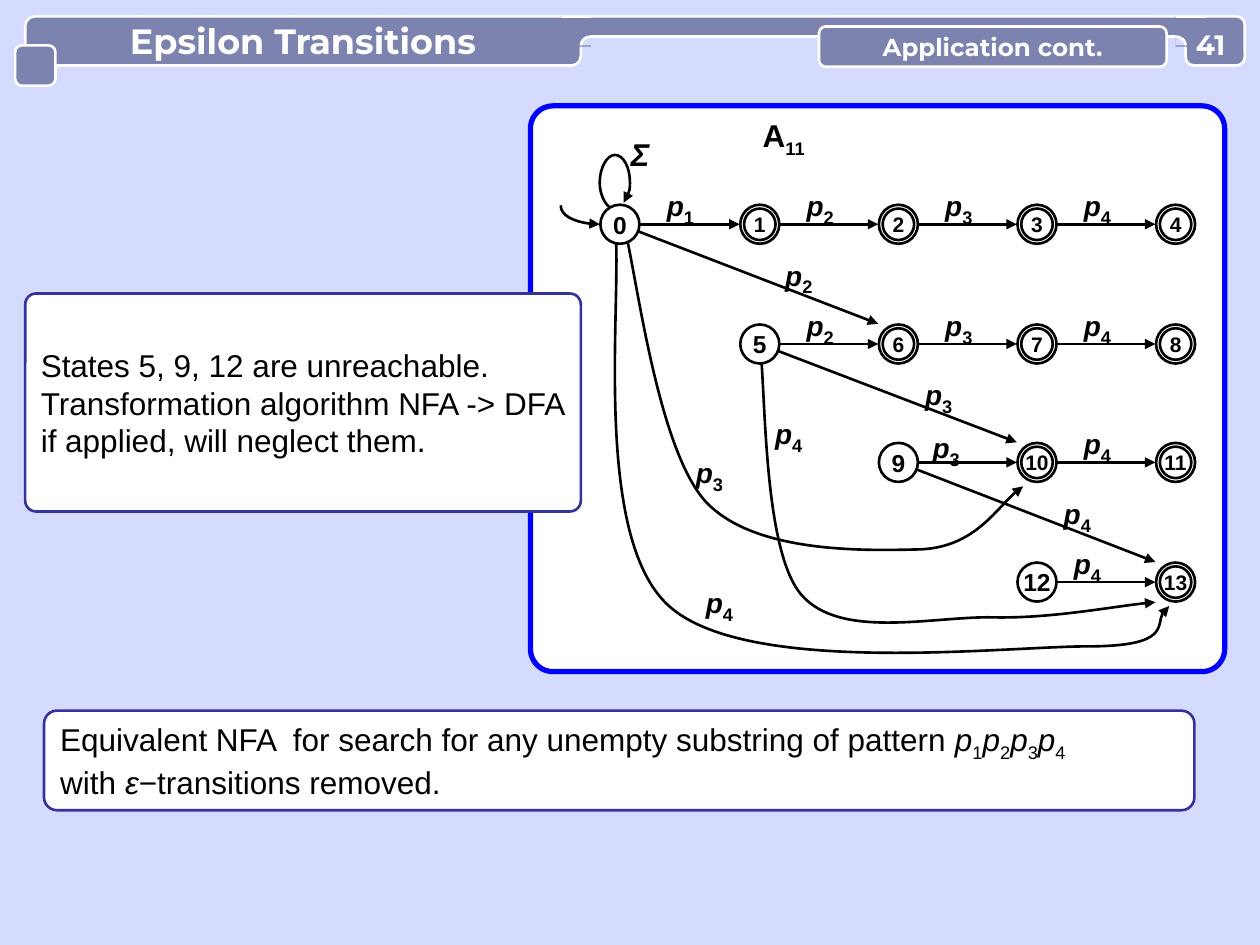
from dataclasses import dataclass

from lxml import etree
from pptx import Presentation
from pptx.dml.color import RGBColor
from pptx.enum.shapes import MSO_CONNECTOR, MSO_SHAPE
from pptx.enum.text import MSO_ANCHOR, PP_ALIGN
from pptx.oxml.ns import qn
from pptx.util import Inches, Pt

LEFT, CENTER = PP_ALIGN.LEFT, PP_ALIGN.CENTER
TOP, MIDDLE = MSO_ANCHOR.TOP, MSO_ANCHOR.MIDDLE
RECT, ROUND, OVAL = MSO_SHAPE.RECTANGLE, MSO_SHAPE.ROUNDED_RECTANGLE, MSO_SHAPE.OVAL


@dataclass(frozen=True)
class Theme:
    page: str = "D5DAFF"
    bar: str = "7D83AF"
    white: str = "FFFFFF"
    ink: str = "000000"
    frame: str = "0000FF"
    note: str = "333399"
    body_font: str = "Arial"
    head_font: str = "Montserrat"
    title: int = 20
    body: int = 18
    symbol: int = 16
    start_state: int = 14
    final_state: int = 12
    line: float = 1.5
    frame_line: float = 3


T = Theme()

# Text: paragraphs of (text, style) runs; style is any of b, i, _ (subscript)
TITLE, SUBTITLE, PAGE_NUMBER = "Epsilon Transitions", "Application cont.", "41"
UNREACHABLE = [
    [("States 5, 9, 12 are unreachable.", "")],
    [("Transformation algorithm NFA -> DFA", "")],
    [("if applied, will neglect them.", "")],
]
PATTERN = [run for n in "1234" for run in (("p", "i"), (n, "_"))]
SUMMARY = [
    [("Equivalent NFA  for search for any unempty substring of pattern ", ""), *PATTERN],
    [("with ", ""), ("ε", "i"), ("−transitions removed.", "")],
]

# Automaton: row r starts in column r with an unmarked state, the rest are final
COLS = (4.92, 6.03, 7.13, 8.23, 9.33)
ROWS = (1.78, 2.73, 3.67, 4.62)
STATES = ([0, 1, 2, 3, 4], [5, 6, 7, 8], [9, 10, 11], [12, 13])
OUTER, INNER = 0.31, 0.25
RADIUS = 0.16
LABEL = 0.32
LABEL_SHIFT = {(2, 3): (-0.1, 0.03), (3, 4): (-0.08, 0)}
LONG_EDGES = [  # start point followed by Bezier triples
    [(4.88, 1.78), (4.95, 2.29), (4.68, 4.25), (5.31, 4.81), (5.93, 5.37), (7.97, 5.13),
     (8.63, 5.13), (9.29, 5.13), (9.15, 4.88), (9.28, 4.81)],
    [(6.03, 2.73), (6.08, 3.06), (6.05, 4.36), (6.36, 4.72), (6.67, 5.08), (7.41, 4.89),
     (7.88, 4.9), (8.34, 4.91), (8.9, 4.8), (9.17, 4.78)],
    [(4.95, 1.78), (5.05, 2.15), (5.21, 3.55), (5.6, 3.98), (5.99, 4.4), (6.89, 4.37),
     (7.31, 4.36), (7.73, 4.34), (7.95, 3.97), (8.12, 3.86)],
]
SELF_LOOP = [(4.88, 1.66), (4.82, 1.66), (4.76, 1.56), (4.76, 1.45), (4.76, 1.33), (4.82, 1.23),
             (4.88, 1.23), (4.95, 1.23), (5, 1.33), (5, 1.45), (5, 1.51), (4.98, 1.57), (4.95, 1.61)]
ENTRY = [(4.45, 1.63), (4.45, 1.71), (4.59, 1.78), (4.76, 1.78)]
LONG_LABELS = [(4, 5.55, 4.62), (3, 5.47, 3.59), (4, 6.1, 3.28)]

# Header notches: left of the patch, then the fillet from the bar to the tab beside it
NOTCHES = [(4.45, 4.69, 4.61), (9.33, 9.33, 9.41)]


def rgb(color):
    return RGBColor.from_string(color)


def write(s, paragraphs, size, color=T.ink, font=T.body_font, align=LEFT, anchor=MIDDLE, inset=None):
    tf = s.text_frame
    tf.word_wrap = False
    tf.vertical_anchor = anchor
    if inset is not None:
        tf.margin_left = tf.margin_right = tf.margin_top = tf.margin_bottom = Inches(inset)
    for i, runs in enumerate(paragraphs):
        p = tf.add_paragraph() if i else tf.paragraphs[0]
        p.alignment = align
        p.font.name, p.font.color.rgb = font, rgb(color)
        for text, style in runs:
            r = p.add_run()
            r.text = text
            r.font.size = Pt(T.body if "_" in style else size)
            r.font.bold, r.font.italic = "b" in style, "i" in style
            if "_" in style:
                r.font._element.set("baseline", "-25000")


def shape(kind, at, fill=T.white, line=T.ink, width=T.line, adj=None):
    s = shapes.add_shape(kind, *map(Inches, at))
    s.shadow.inherit = False
    s.fill.solid()
    s.fill.fore_color.rgb = rgb(fill)
    if adj is not None:
        s.adjustments[0] = adj
    stroke(s, line, width)
    return s


def stroke(s, color, width=T.line, arrow=False):
    if color is None:
        s.line.fill.background()
        return
    s.line.color.rgb = rgb(color)
    s.line.width = Pt(width)
    if arrow:
        etree.SubElement(s.line._get_or_add_ln(), qn("a:tailEnd"), type="triangle", w="med", len="med")


def line(start, end, color=T.ink, arrow=True):
    c = shapes.add_connector(MSO_CONNECTOR.STRAIGHT, *map(Inches, (*start, *end)))
    stroke(c, color, arrow=arrow)
    etree.SubElement(c._element.spPr, qn("a:effectLst"))


def curve(points, color=T.ink, arrow=True, fill=None):
    """Join points as Bezier triples; a leftover point becomes a straight corner."""
    pts = [(Inches(x), Inches(y)) for x, y in points]
    builder = shapes.build_freeform(*pts[0])
    builder.add_line_segments(pts[1:], close=fill is not None)
    s = builder.convert_to_shape()
    s.shadow.inherit = False
    segments = list(s._element.iter(qn("a:lnTo")))
    for i in range(0, len(segments) - 2, 3):
        bezier = etree.Element(qn("a:cubicBezTo"))
        segments[i].addprevious(bezier)
        for segment in segments[i:i + 3]:
            bezier.append(segment[0])
            segment.getparent().remove(segment)
    if fill:
        s.fill.solid()
        s.fill.fore_color.rgb = rgb(fill)
    else:
        s.fill.background()
    stroke(s, color, arrow=arrow)


def text_box(at, runs, size, **options):
    write(shapes.add_textbox(*map(Inches, at)), [runs], size, **options)


def symbol(n, x, y):
    text_box((x, y, LABEL, LABEL), [("p", "bi"), (str(n), "b_")], T.symbol,
             align=CENTER, anchor=TOP, inset=0)


def circle(x, y, size):
    return shape(OVAL, (x - size / 2, y - size / 2, size, size))


def state(n, x, y, final):
    s = circle(x, y, OUTER)
    if final:
        s = circle(x, y, INNER)
    write(s, [[(str(n), "b")]], T.final_state if final else T.start_state, align=CENTER, inset=0)


def automaton():
    for points in (*LONG_EDGES, SELF_LOOP, ENTRY):
        curve(points)
    for r in range(3):
        line((COLS[r], ROWS[r]), (COLS[r + 2] - RADIUS, ROWS[r + 1] - RADIUS))
    for r, (y, numbers) in enumerate(zip(ROWS, STATES)):
        for c, n in enumerate(numbers, r):
            state(n, COLS[c], y, final=c > r)
            if c > r:
                line((COLS[c - 1] + RADIUS, y), (COLS[c] - RADIUS, y))
                dx, dy = LABEL_SHIFT.get((r, c), (0, 0))
                symbol(c, COLS[c - 1] + 0.32 + dx, y - 0.31 + dy)
    for r in range(3):
        symbol(r + 2, COLS[r] + 1.26, ROWS[r] + 0.24)
    for label in LONG_LABELS:
        symbol(*label)


def header():
    def tab(at, adj, text=None, size=None):
        s = shape(ROUND, at, T.bar, T.white, adj=adj)
        if text:
            write(s, [[(text, "b")]], size, T.white, T.head_font, CENTER)

    tab((0.2, 0.13, 4.41, 0.39), 0.19, TITLE, T.title)
    tab((4.61, 0.13, 4.88, 0.16), 0.5)
    tab((0.12, 0.36, 0.32, 0.32), 0.17)
    tab((9.41, 0.13, 0.47, 0.39), 0.17)
    for left, bar_x, tab_x in NOTCHES:
        shape(RECT, (left, 0.13, 0.24, 0.24), T.bar, None)
        line((left, 0.13), (left + 0.24, 0.13), T.white, arrow=False)
        mid = (bar_x + tab_x) / 2
        arc = [(bar_x, 0.29), (mid, 0.29), (tab_x, 0.32), (tab_x, 0.36)]
        curve([*arc, (bar_x, 0.36)], None, False, T.page)
        curve(arc, T.white, False)
    tab((6.5, 0.21, 2.76, 0.32), 0.17, SUBTITLE, T.start_state)
    text_box((9.49, 0.22, 0.32, 0.27), [(PAGE_NUMBER, "b")], T.symbol,
             color=T.white, font=T.head_font, inset=0)


prs = Presentation()
prs.slide_width, prs.slide_height = Inches(10), Inches(7.5)
slide = prs.slides.add_slide(prs.slide_layouts[6])
slide.background.fill.solid()
slide.background.fill.fore_color.rgb = rgb(T.page)
shapes = slide.shapes

shape(ROUND, (4.21, 0.84, 5.51, 4.49), line=T.frame, width=T.frame_line, adj=0.04)
write(shape(ROUND, (0.35, 5.64, 9.13, 0.79), line=T.note, adj=0.13), SUMMARY, T.body)
automaton()
write(shape(ROUND, (0.2, 2.33, 4.41, 1.73), line=T.note, adj=0.05), UNREACHABLE, T.body)
header()
text_box((4.92, 1.07, LABEL, LABEL), [("Σ", "bi")], T.body, align=CENTER, anchor=TOP, inset=0)
text_box((5.94, 0.87, 0.56, 0.4), [("A", "b"), ("11", "b_")], T.body, align=CENTER, anchor=TOP)

prs.save("out.pptx")
